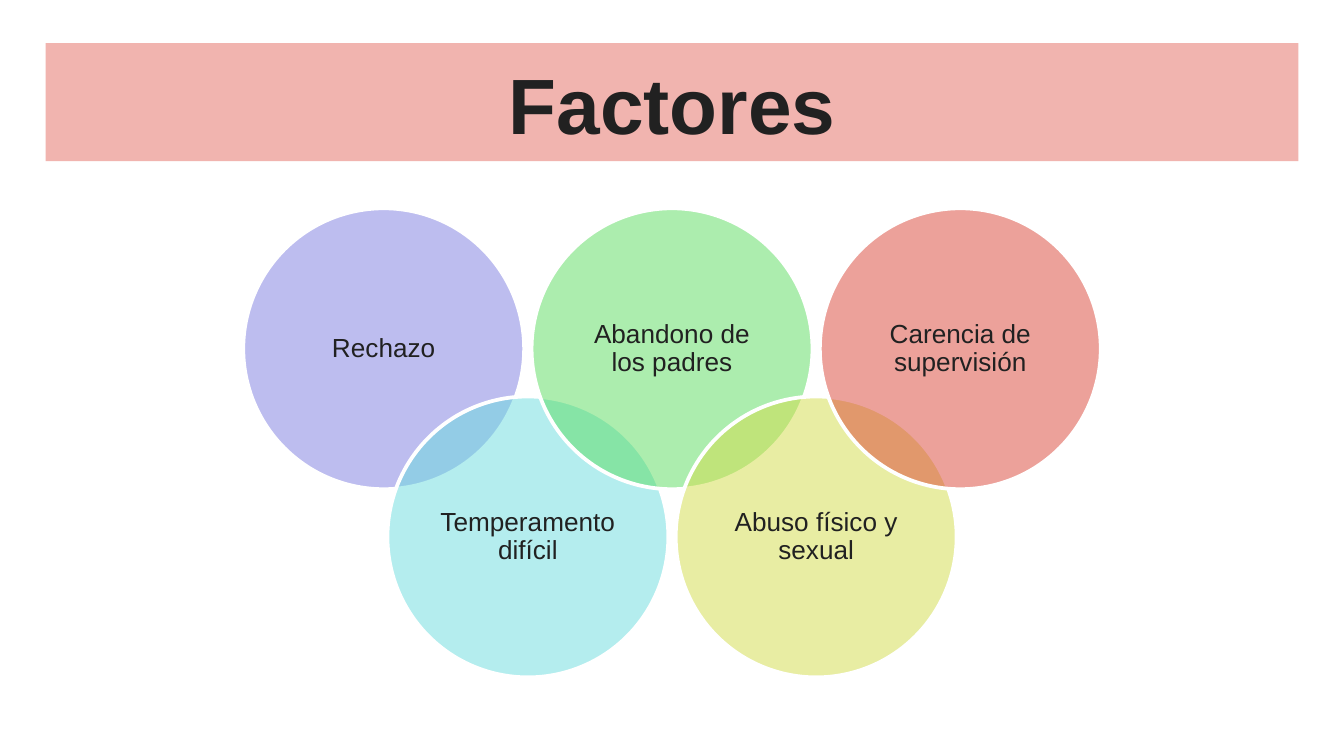
from dataclasses import dataclass

from lxml import etree
from pptx import Presentation
from pptx.dml.color import RGBColor
from pptx.enum.shapes import MSO_SHAPE
from pptx.enum.text import MSO_ANCHOR, PP_ALIGN
from pptx.oxml.ns import qn
from pptx.util import Inches, Pt

RECT, OVAL = MSO_SHAPE.RECTANGLE, MSO_SHAPE.OVAL
TOP, MIDDLE = MSO_ANCHOR.TOP, MSO_ANCHOR.MIDDLE
CENTER = PP_ALIGN.CENTER


@dataclass(frozen=True)
class Theme:
    font: str = "Arial"
    ink: str = "212121"
    band: str = "F1B4AF"
    edge: str = "FFFFFF"
    title: int = 42
    label: int = 14
    alpha: int = 50


THEME = Theme()

# Label and colour of each circle, from left to right
FACTORS = [
    ("Rechazo", "7C7CE0"),
    ("Temperamento difícil", "6BDCDE"),
    ("Abandono de los padres", "5ADD5F"),
    ("Abuso físico y sexual", "D3DC49"),
    ("Carencia de supervisión", "DB4437"),
]
FIRST, LAST = 1.81, 6.1
STEP = (LAST - FIRST) / (len(FACTORS) - 1)
ROWS = (1.55, 2.95)
SIZE, BOX = 2.09, 1.48


def write(shape, text, size, bold=False, anchor=MIDDLE, inset=0.06, space=None):
    frame = shape.text_frame
    frame.word_wrap = True
    frame.vertical_anchor = anchor
    frame.margin_left = frame.margin_right = Inches(inset)
    frame.margin_top = frame.margin_bottom = Inches(inset)
    para = frame.paragraphs[0]
    para.alignment = CENTER
    para.line_spacing = space
    run = para.add_run()
    run.text = text
    run.font.name = THEME.font
    run.font.size = Pt(size)
    run.font.bold = bold
    run.font.color.rgb = RGBColor.from_string(THEME.ink)


def add_form(shapes, kind, left, top, width, height, color):
    form = shapes.add_shape(
        kind, Inches(left), Inches(top), Inches(width), Inches(height))
    form.shadow.inherit = False
    form.fill.solid()
    form.fill.fore_color.rgb = RGBColor.from_string(color)
    form.line.fill.background()
    return form


def fade(form, percent):
    fill = form.element.spPr.find(qn("a:solidFill"))
    etree.SubElement(fill[0], qn("a:alpha"), val=str(percent * 1000))


def add_title(shapes, text):
    band = add_form(shapes, RECT, 0.34, 0.32, 9.32, 0.88, THEME.band)
    write(band, text, THEME.title, bold=True, anchor=TOP, inset=0.1)


def add_circle(shapes, left, top, text, color):
    disc = add_form(shapes, OVAL, left, top, SIZE, SIZE, color)
    fade(disc, THEME.alpha)
    disc.line.color.rgb = RGBColor.from_string(THEME.edge)
    disc.line.width = Pt(2)
    # Label box centred in the circle
    pad = (SIZE - BOX) / 2
    label = shapes.add_textbox(
        Inches(left + pad), Inches(top + pad), Inches(BOX), Inches(BOX))
    write(label, text, THEME.label, space=0.9)


def main():
    # Widescreen page, 16:9
    deck = Presentation()
    deck.slide_width, deck.slide_height = Inches(10), Inches(10 * 9 / 16)
    slide = deck.slides.add_slide(deck.slide_layouts[6])

    # Title band
    add_title(slide.shapes, "Factores")

    # Linked circles, alternating between two rows
    group = slide.shapes.add_group_shape()
    for i, (text, color) in enumerate(FACTORS):
        add_circle(group.shapes, FIRST + i * STEP, ROWS[i % 2], text, color)

    deck.save("out.pptx")


if __name__ == "__main__":
    main()
